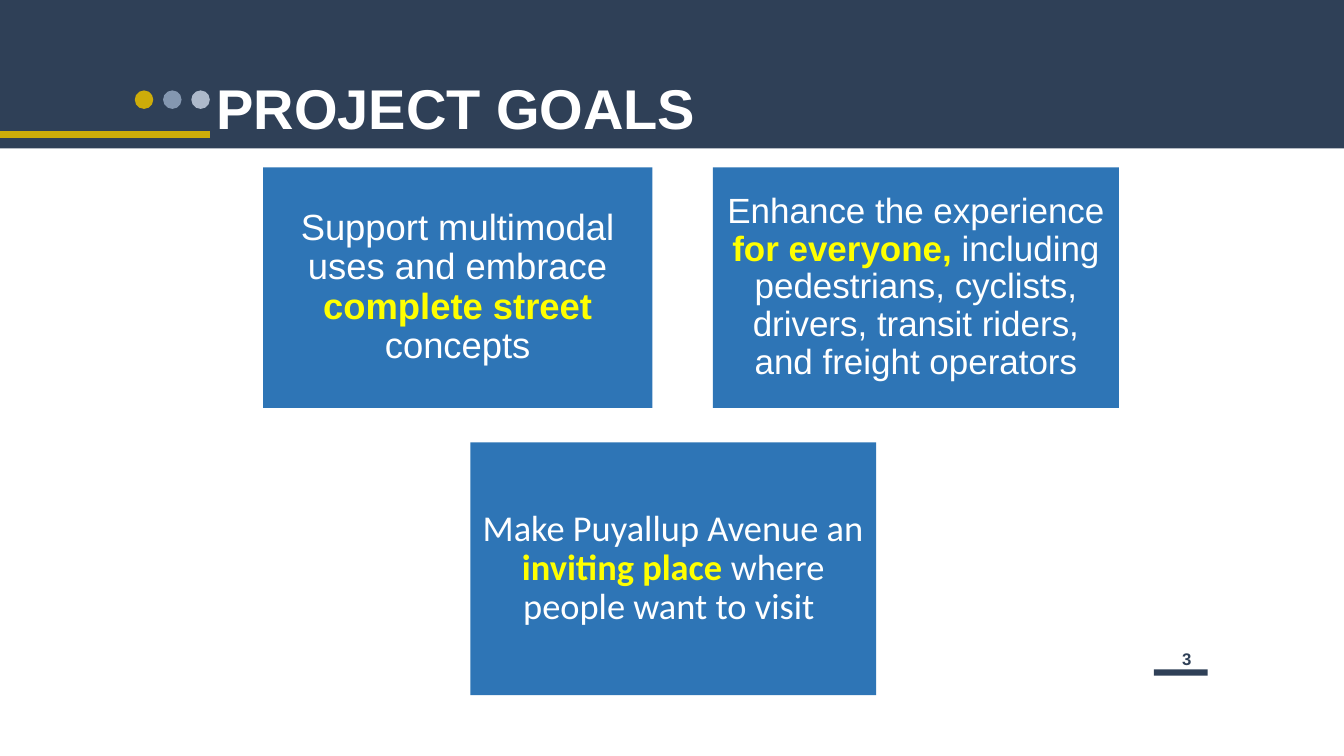
import pptx
import pptx.util
import pptx.dml.color
import pptx.enum.shapes
import pptx.enum.text
import pptx.oxml.ns
import lxml.etree

Pt = pptx.util.Pt
SHAPES = pptx.enum.shapes.MSO_SHAPE
ALIGN = pptx.enum.text.PP_ALIGN
NAVY, GOLD, BLUE = "2F4057", "CDAC09", "2E75B6"
WHITE, YELLOW = "FFFFFF", "FFFF00"

presentation = pptx.Presentation()
presentation.slide_width, presentation.slide_height = Pt(960), Pt(540)
slide = presentation.slides.add_slide(presentation.slide_layouts[6])


def add_filled_shape(kind, left, top, width, height, color):
    shape = slide.shapes.add_shape(kind, Pt(left), Pt(top), Pt(width), Pt(height))
    shape.shadow.inherit = False
    shape.fill.solid()
    shape.fill.fore_color.rgb = pptx.dml.color.RGBColor.from_string(color)
    shape.line.fill.background()
    return shape


def add_run(paragraph, text, size, font_name, color, bold):
    run = paragraph.add_run()
    run.text = text
    run.font.size = Pt(size)
    run.font.name = font_name
    run.font.bold = bold
    run.font.color.rgb = pptx.dml.color.RGBColor.from_string(color)


# Header band, dots and accent line
add_filled_shape(SHAPES.RECTANGLE, 0, 0, 960, 106, NAVY)
for index, color in enumerate((GOLD, "8497B0", "ADB9CA")):
    add_filled_shape(SHAPES.OVAL, 96.3 + 20.2 * index, 64.6, 13.2, 13.2, color)

accent = slide.shapes.add_connector(
    pptx.enum.shapes.MSO_CONNECTOR.STRAIGHT, Pt(0), Pt(96.2), Pt(150), Pt(96.2))
accent.line.color.rgb = pptx.dml.color.RGBColor.from_string(GOLD)
accent.line.width = Pt(4.5)
lxml.etree.SubElement(accent.element.spPr, pptx.oxml.ns.qn("a:effectLst"))

title = slide.shapes.add_textbox(Pt(147.6), Pt(49), Pt(618), Pt(54))
title.text_frame.word_wrap = True
add_run(title.text_frame.paragraphs[0], "PROJECT GOALS", 40, "Arial", WHITE, True)

# Page number
number = slide.shapes.add_textbox(Pt(833), Pt(460), Pt(29.5), Pt(21.6))
number.text_frame.word_wrap = False
number.text_frame.paragraphs[0].alignment = ALIGN.CENTER
add_run(number.text_frame.paragraphs[0], "3", 12, "Arial", NAVY, True)
add_filled_shape(SHAPES.RECTANGLE, 824.2, 478.2, 38.4, 4.4, NAVY)

# Goals: left, top, width, height, size, font, (before, highlight, after)
goals = [
    (188, 119.5, 278, 171.8, 26, "Arial",
     ("Support multimodal uses and embrace ", "complete street ", "concepts")),
    (509.2, 119.5, 290, 171.8, 25, "Arial",
     ("Enhance the experience ", "for everyone, ",
      "including pedestrians, cyclists, drivers, transit riders, and freight operators")),
    (336, 316, 289.8, 180.5, 26, "Calibri",
     ("Make Puyallup Avenue an ", "inviting place ", "where people want to visit ")),
]
for left, top, width, height, size, font_name, parts in goals:
    goal = add_filled_shape(SHAPES.RECTANGLE, left, top, width, height, BLUE)
    frame = goal.text_frame
    frame.word_wrap = True
    frame.vertical_anchor = pptx.enum.text.MSO_ANCHOR.MIDDLE
    frame.margin_left = frame.margin_right = Pt(8.6)
    frame.margin_top = frame.margin_bottom = Pt(8.6)
    paragraph = frame.paragraphs[0]
    paragraph.alignment = ALIGN.CENTER
    paragraph.line_spacing = 0.9
    for text, color, bold in zip(parts, (WHITE, YELLOW, WHITE), (False, True, False)):
        add_run(paragraph, text, size, font_name, color, bold)

presentation.save("out.pptx")
